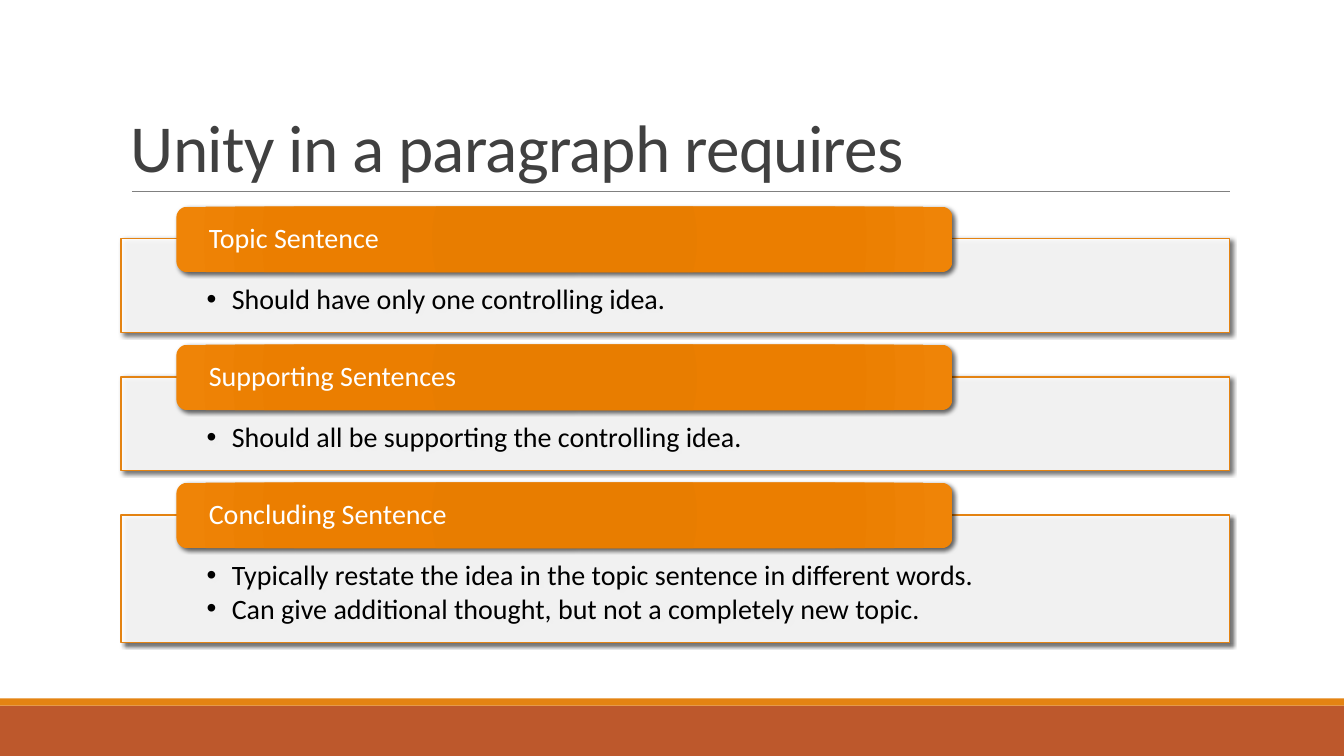
from lxml.etree import SubElement
from pptx import Presentation
from pptx.dml.color import RGBColor
from pptx.enum.shapes import MSO_CONNECTOR, MSO_SHAPE
from pptx.enum.text import MSO_ANCHOR, PP_ALIGN
from pptx.oxml import parse_xml
from pptx.oxml.ns import nsdecls, qn
from pptx.util import Pt

WHITE = RGBColor(0xFF, 0xFF, 0xFF)
BLACK = RGBColor(0x00, 0x00, 0x00)
CHARCOAL = RGBColor(0x40, 0x40, 0x40)
GRAY = RGBColor(0x80, 0x80, 0x80)
ORANGE = RGBColor(0xE4, 0x83, 0x12)
RUST = RGBColor(0xBD, 0x58, 0x2C)
TAB_STOPS = [
    (0, RGBColor(0xE5, 0x7B, 0x00)),
    (34, RGBColor(0xE8, 0x7D, 0x00)),
    (70, RGBColor(0xEB, 0x7E, 0x00)),
    (100, RGBColor(0xEF, 0x84, 0x07)),
]

WIDTH, HEIGHT = 960, 540
LEFT, PANEL_WIDTH = 86.4, 792
FIRST_PANEL_TOP, PANEL_GAP = 170.6, 31.7
ONE_LINE_HEIGHT, EXTRA_LINE_HEIGHT = 66.9, 24.5
TAB_LEFT, TAB_WIDTH, TAB_HEIGHT, TAB_RISE = 126, 554.4, 46.8, 23

SECTIONS = [
    ("Topic Sentence", ["Should have only one controlling idea."]),
    ("Supporting Sentences", ["Should all be supporting the controlling idea."]),
    ("Concluding Sentence", [
        "Typically restate the idea in the topic sentence in different words.",
        "Can give additional thought, but not a completely new topic.",
    ]),
]


def apply_format(target, values):
    for name, value in values.items():
        setattr(target, name, value)


def write_text(shape, lines, frame_format, para_format, font_format, color):
    frame = shape.text_frame
    apply_format(frame, {"word_wrap": True, **frame_format})
    spans = []
    for index, line in enumerate(lines):
        para = frame.paragraphs[0] if index == 0 else frame.add_paragraph()
        apply_format(para, {"alignment": PP_ALIGN.LEFT, **para_format})
        span = para.add_run()
        span.text = line
        apply_format(span.font, {"name": "Calibri", **font_format})
        span.font.color.rgb = color
        spans.append(span)
    return spans


def add_block(page, kind, left, top, width, height, fill=None):
    block = page.shapes.add_shape(kind, Pt(left), Pt(top), Pt(width), Pt(height))
    block.shadow.inherit = False
    block.line.fill.background()
    if fill is not None:
        block.fill.solid()
        block.fill.fore_color.rgb = fill
    return block


def cast_shadow(shape):
    effects = shape._element.spPr.find(qn("a:effectLst"))
    effects.append(parse_xml(
        f'<a:outerShdw {nsdecls("a")} blurRad="{Pt(3)}" dist="{Pt(2)}" '
        'dir="2700000" algn="br" rotWithShape="0">'
        '<a:srgbClr val="000000"><a:alpha val="60000"/></a:srgbClr>'
        '</a:outerShdw>'))


def fill_radial(shape, stops):
    marks = "".join(
        f'<a:gs pos="{place * 1000}"><a:srgbClr val="{color}"/></a:gs>'
        for place, color in stops)
    gradient = parse_xml(
        f'<a:gradFill {nsdecls("a")} rotWithShape="1"><a:gsLst>{marks}</a:gsLst>'
        '<a:path path="circle"><a:fillToRect l="100000" t="100000" '
        'r="100000" b="100000"/></a:path></a:gradFill>')
    shape._element.spPr.find(qn("a:prstGeom")).addnext(gradient)


def add_bullet(para):
    properties = para._p.get_or_add_pPr()
    properties.set("marL", str(Pt(18)))
    properties.set("indent", str(Pt(-18)))
    SubElement(properties, qn("a:buFont")).set("typeface", "Arial")
    SubElement(properties, qn("a:buChar")).set("char", "•")


def add_panel(page, top, height, lines):
    panel = add_block(page, MSO_SHAPE.RECTANGLE, LEFT, top, PANEL_WIDTH, height, WHITE)
    color = panel._element.spPr.find(qn("a:solidFill"))[0]
    SubElement(color, qn("a:alpha")).set("val", "90000")
    panel.line.color.rgb = ORANGE
    panel.line.width = Pt(1)
    cast_shadow(panel)
    write_text(
        panel, lines,
        {"vertical_anchor": MSO_ANCHOR.TOP, "margin_left": Pt(61.2),
         "margin_right": Pt(61.2), "margin_top": Pt(33.1), "margin_bottom": Pt(11.5)},
        {"line_spacing": 0.9, "space_after": Pt(2.4)},
        {"size": Pt(20)}, BLACK)
    for para in panel.text_frame.paragraphs:
        add_bullet(para)


def add_tab(page, top, label):
    tab = add_block(page, MSO_SHAPE.ROUNDED_RECTANGLE, TAB_LEFT, top, TAB_WIDTH, TAB_HEIGHT)
    fill_radial(tab, TAB_STOPS)
    cast_shadow(tab)
    write_text(
        tab, [label],
        {"vertical_anchor": MSO_ANCHOR.MIDDLE, "margin_left": Pt(20.9),
         "margin_right": Pt(20.9), "margin_top": 0, "margin_bottom": 0},
        {"line_spacing": 0.9}, {"size": Pt(20)}, WHITE)


def add_title(page, text):
    box = page.shapes.add_textbox(Pt(LEFT), Pt(22.3), Pt(PANEL_WIDTH), Pt(114.5))
    spans = write_text(
        box, [text], {"vertical_anchor": MSO_ANCHOR.BOTTOM},
        {"line_spacing": 0.85}, {"size": Pt(48)}, CHARCOAL)
    spans[0].font._element.set("spc", "-50")


def add_rule(page, left, right, top):
    rule = page.shapes.add_connector(
        MSO_CONNECTOR.STRAIGHT, Pt(left), Pt(top), Pt(right), Pt(top))
    rule.line.color.rgb = GRAY
    rule.line.width = Pt(0.5)
    SubElement(rule._element.spPr, qn("a:effectLst"))


def main():
    deck = Presentation()
    apply_format(deck, {"slide_width": Pt(WIDTH), "slide_height": Pt(HEIGHT)})
    page = deck.slides.add_slide(deck.slide_layouts[6])

    add_block(page, MSO_SHAPE.RECTANGLE, 0, 504, WIDTH, 36, RUST)
    add_block(page, MSO_SHAPE.RECTANGLE, 0, 498.8, WIDTH, 5.2, ORANGE)
    add_rule(page, 94.2, 878.8, 136.8)
    add_title(page, "Unity in a paragraph requires")

    top = FIRST_PANEL_TOP
    for label, lines in SECTIONS:
        height = ONE_LINE_HEIGHT + EXTRA_LINE_HEIGHT * (len(lines) - 1)
        add_panel(page, top, height, lines)
        add_tab(page, top - TAB_RISE, label)
        top += height + PANEL_GAP

    deck.save("out.pptx")


if __name__ == "__main__":
    main()
